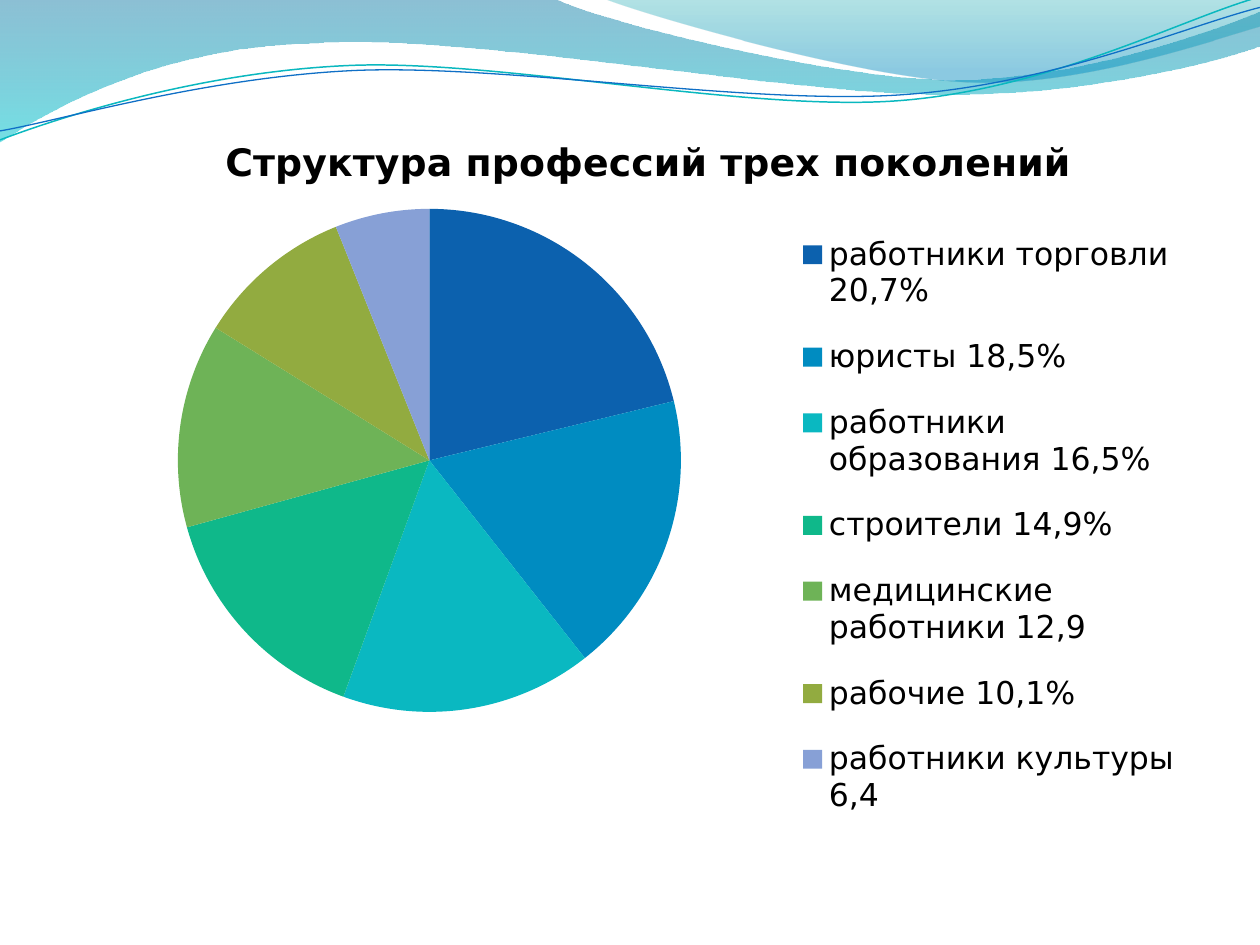
from math import cos, radians, sin

from lxml.etree import SubElement
from pptx import Presentation
from pptx.chart.data import CategoryChartData
from pptx.dml.color import RGBColor
from pptx.enum.chart import XL_CHART_TYPE, XL_LEGEND_POSITION
from pptx.oxml import parse_xml
from pptx.oxml.ns import nsdecls, qn
from pptx.util import Cm, Pt

FONT = "DejaVu Sans"
BLACK = RGBColor(0x00, 0x00, 0x00)
DEEP_BLUE = RGBColor(0x00, 0x74, 0xA1)
AQUA = RGBColor(0x00, 0xC6, 0xCF)
SEA_GREEN = RGBColor(0x00, 0xA1, 0xA9)
SKY_BLUE = RGBColor(0x00, 0x8B, 0xBF)
LINE_TEAL = RGBColor(0x0A, 0xB8, 0xBF)
LINE_BLUE = RGBColor(0x0F, 0x6F, 0xC6)

TITLE = "Структура профессий трех поколений"
PROFESSIONS = [
    ("работники торговли 20,7%", 21, RGBColor(0x0C, 0x61, 0xAE)),
    ("юристы 18,5%", 18, RGBColor(0x00, 0x8C, 0xC1)),
    ("работники образования 16,5%", 16, RGBColor(0x0A, 0xB8, 0xC1)),
    ("строители 14,9%", 15, RGBColor(0x0F, 0xB8, 0x8A)),
    ("медицинские работники 12,9", 13, RGBColor(0x6E, 0xB3, 0x57)),
    ("рабочие 10,1%", 10, RGBColor(0x92, 0xAB, 0x40)),
    ("работники культуры 6,4 ", 6, RGBColor(0x87, 0xA0, 0xD6)),
]

LEFT_WAVE = [
    [(0, 0)], [(11.18, -0.03)],
    [(12.09, 0.43), (16.87, 1.6), (19.25, 1.6)],
    [(21.67, 1.6), (24.33, 0.66), (25.4, 0.23)],
    [(25.43, 0.91)],
    [(24.97, 1.12), (22.1, 1.93), (18.95, 1.9)],
    [(15.8, 1.9), (9.7, 0.71), (6.53, 0.86)],
    [(3.28, 0.91), (1.17, 2.11), (-0.03, 2.87)],
]
RIGHT_WAVE = [
    [(12.17, -0.03)],
    [(12.93, 0.28), (17.32, 1.57), (19.53, 1.65)],
    [(21.74, 1.75), (24.41, 0.81), (25.4, 0.53)],
    [(25.4, 0)],
]
TEAL_CURVE = [
    [(0, 2.82)],
    [(1.22, 2.36), (4.01, 1.45), (7.04, 1.32)],
    [(10.03, 1.19), (15.06, 2.26), (18.11, 2.03)],
    [(21.16, 1.8), (23.83, 0.38), (25.35, -0.05)],
]
BLUE_CURVE = [
    [(0, 2.64)],
    [(1.19, 2.44), (4.17, 1.55), (7.19, 1.42)],
    [(10.24, 1.3), (15.16, 2.13), (18.21, 1.91)],
    [(21.23, 1.7), (23.9, 0.53), (25.4, 0.15)],
]
TILT = -2.7


def rotate(segments, center, degrees):
    cx, cy = center
    c, s = cos(radians(degrees)), sin(radians(degrees))
    return [[(cx + (x - cx) * c - (y - cy) * s, cy + (x - cx) * s + (y - cy) * c)
             for x, y in segment] for segment in segments]


def add_outline(slide, segments, left, top, close):
    emu = [(Cm(left + x), Cm(top + y)) for segment in segments for x, y in segment]
    builder = slide.shapes.build_freeform(*emu[0], scale=1.0)
    builder.add_line_segments(emu[1:], close=close)
    sp = builder.convert_to_shape()
    sp.shadow.inherit = False
    lines = iter(list(sp._element.spPr.iter(qn("a:lnTo"))))
    for segment in segments[1:]:
        parts = [next(lines) for _ in segment]
        if len(parts) == 3:
            parts[0].addprevious(bezier := parse_xml(f'<a:cubicBezTo {nsdecls("a")}/>'))
            for part in parts:
                bezier.append(part[0])
                part.getparent().remove(part)
    return sp


def add_wave(slide, segments, left, top, stops):
    sp = add_outline(slide, segments, left, top, True)
    sp.line.fill.background()
    sp.fill.gradient()
    sp.fill.gradient_angle = 270
    for stop, (position, color, _) in zip(sp.fill.gradient_stops, stops):
        stop.position = position
        stop.color.rgb = color
    colors = sp._element.spPr.find(qn("a:gradFill")).iter(qn("a:srgbClr"))
    for color, (_, _, opacity) in zip(colors, stops):
        SubElement(color, qn("a:alpha")).set("val", str(opacity * 1000))


def add_curve(slide, segments, left, top, center, color, width):
    sp = add_outline(slide, rotate(segments, center, -TILT), left, top, False)
    sp.rotation = TILT
    sp.fill.background()
    sp.line.color.rgb = color
    sp.line.width = Pt(width)


def add_header_waves(slide, left, top):
    add_wave(slide, LEFT_WAVE, left, top, [(0, DEEP_BLUE, 45), (1, AQUA, 55)])
    add_wave(slide, RIGHT_WAVE, left, top, [(0, SEA_GREEN, 30), (0.8, SKY_BLUE, 45)])
    add_curve(slide, TEAL_CURVE, left, top, (12.67, 1.46), LINE_TEAL, 0.85)
    add_curve(slide, BLUE_CURVE, left, top, (12.69, 1.5), LINE_BLUE, 0.75)


def set_layout(element, index, percents, target=""):
    for old in element.findall(qn("c:layout")):
        element.remove(old)
    sizes = "".join(f'<c:{name} val="{percent / 100:.3f}"/>'
                    for name, percent in zip("xywh", percents))
    element.insert(index, parse_xml(
        f'<c:layout {nsdecls("c")}><c:manualLayout>{target}'
        f'<c:xMode val="edge"/><c:yMode val="edge"/>{sizes}'
        '</c:manualLayout></c:layout>'))


def set_font(font, size, bold=False):
    font.name = FONT
    font.size = Pt(size)
    font.bold = bold
    font.color.rgb = BLACK


def add_professions_chart(slide, left, top, width, height):
    data = CategoryChartData()
    data.categories = [name for name, _, _ in PROFESSIONS]
    data.add_series(TITLE, [value for _, value, _ in PROFESSIONS])
    chart = slide.shapes.add_chart(XL_CHART_TYPE.PIE, Cm(left), Cm(top),
                                   Cm(width), Cm(height), data).chart
    set_font(chart.font, 18)

    chart.has_title = True
    tf = chart.chart_title.text_frame
    tf.text = TITLE
    set_font(tf.paragraphs[0].font, 21.6, True)
    chart.chart_title.include_in_layout = False

    chart.has_legend = True
    legend = chart.legend
    legend.position = XL_LEGEND_POSITION.RIGHT
    legend.include_in_layout = False
    set_font(legend.font, 18)
    set_layout(legend._element, 1, (62.3, 13.2, 35, 84.6))

    plot = chart.plots[0]
    plot.vary_by_categories = True
    for i, (_, _, color) in enumerate(PROFESSIONS):
        fill = plot.series[0].points[i].format.fill
        fill.solid()
        fill.fore_color.rgb = color
    plot_area = chart._chartSpace.chart.plotArea
    set_layout(plot_area, 0, (1.7, 13.4, 58.2, 66.9), '<c:layoutTarget val="inner"/>')


def main():
    prs = Presentation()
    prs.slide_width, prs.slide_height = Cm(25.4), Cm(19.05)
    s = prs.slides.add_slide(prs.slide_layouts[6])
    add_header_waves(s, 0, 0)
    add_professions_chart(s, 1.57, 2.18, 23.01, 15.16)
    prs.save("out.pptx")


if __name__ == "__main__":
    main()
